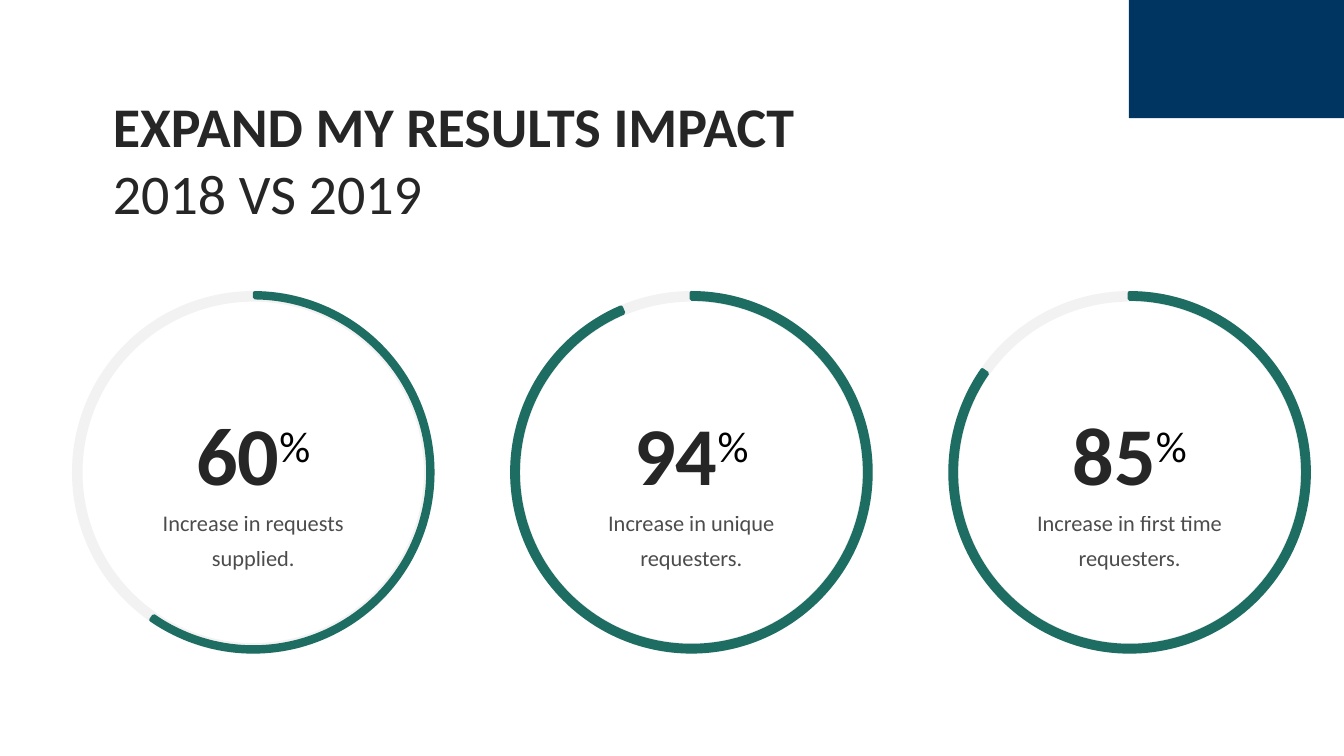
import dataclasses

import pptx
import pptx.dml.color
import pptx.enum.shapes
import pptx.enum.text
import pptx.oxml.ns
import pptx.util
from lxml import etree

SHAPE = pptx.enum.shapes.MSO_SHAPE
ALIGN = pptx.enum.text.PP_ALIGN
ANCHOR = pptx.enum.text.MSO_ANCHOR
qn = pptx.oxml.ns.qn
Inches, Pt = pptx.util.Inches, pptx.util.Pt

# Slide and grid, in inches
WIDTH, HEIGHT = 10, 10 * 9 / 16
RING_LEFT, RING_TOP, RING_SIZE = 0.55, 2.18, 2.67
COLUMN_STEP = 3.26


@dataclasses.dataclass(frozen=True)
class Theme:
    font: str = "Calibri"
    navy: str = "003562"
    green: str = "1E6D63"
    track: str = "F2F2F2"
    ink: str = "262626"
    black: str = "000000"
    title_size: int = 30
    figure_size: int = 44
    percent_size: int = 40
    caption_size: int = 12
    ring_line: int = 2


@dataclasses.dataclass(frozen=True)
class Gauge:
    figure: str
    caption: str
    start: float  # degrees; the mirrored arc runs from here to the top
    end: float = 270
    thickness: float = 0.017


THEME = Theme()
GAUGES = [
    Gauge("60", "Increase in requests supplied.", 55.28, 269.51, 0.013),
    Gauge("94", "Increase in unique requesters.", 293.09),
    Gauge("85", "Increase in first time requesters.", 325.21),
]


def rgb(color: str):
    return pptx.dml.color.RGBColor.from_string(color)


def add_shape(s, kind, box: tuple, color: str, line: float = 0):
    sp = s.shapes.add_shape(kind, *(Inches(v) for v in box))
    sp.shadow.inherit = False
    sp.fill.solid()
    sp.fill.fore_color.rgb = rgb(color)
    if line:
        sp.line.color.rgb = rgb(color)
        sp.line.width = Pt(line)
    else:
        sp.line.fill.background()
    return sp


def add_run(p, text: str, size: float, color: str, bold: bool = False):
    r = p.add_run()
    r.text = text
    r.font.name = THEME.font
    r.font.size = Pt(size)
    r.font.bold = bold
    r.font.color.rgb = rgb(color)
    return r


def set_insets(tf, x: float, y: float) -> None:
    tf.word_wrap = True
    tf.margin_left = tf.margin_right = Inches(x)
    tf.margin_top = tf.margin_bottom = Inches(y)


def add_title(s, lines: list[tuple[str, bool]]) -> None:
    tf = s.shapes.add_textbox(*(Inches(v) for v in (0.77, 0.64, 5.89, 0.98))).text_frame
    set_insets(tf, 0.07, 0.04)
    for i, (text, bold) in enumerate(lines):
        p = tf.add_paragraph() if i else tf.paragraphs[0]
        add_run(p, text, THEME.title_size, THEME.ink, bold)


def add_gauge(s, gauge: Gauge, column: int) -> None:
    box = (RING_LEFT + column * COLUMN_STEP, RING_TOP, RING_SIZE, RING_SIZE)

    # Full track, which holds the text
    ring = add_shape(s, SHAPE.DONUT, box, THEME.track, THEME.ring_line)
    ring.adjustments[0] = 0.019
    tf = ring.text_frame
    set_insets(tf, 0, 0)
    tf.vertical_anchor = ANCHOR.MIDDLE
    head, caption = tf.paragraphs[0], tf.add_paragraph()
    for p in (head, caption):
        p.alignment = ALIGN.CENTER
        p.line_spacing = 1.3
    add_run(head, gauge.figure, THEME.figure_size, THEME.ink, True)
    percent = add_run(head, "%", THEME.percent_size, THEME.black)
    percent.font._element.set("baseline", "30000")
    r = add_run(caption, gauge.caption, THEME.caption_size, THEME.black)
    color = r.font._element.find(f".//{qn('a:srgbClr')}")
    etree.SubElement(color, qn("a:alpha"), val="70000")

    # Progress arc; angles are stored in 60000ths of a degree, scaled by 100000
    arc = add_shape(s, SHAPE.BLOCK_ARC, box, THEME.green, THEME.ring_line)
    arc.adjustments[0] = gauge.start * 0.6
    arc.adjustments[1] = gauge.end * 0.6
    arc.adjustments[2] = gauge.thickness
    arc._element.spPr.find(qn("a:xfrm")).set("flipH", "1")


def main() -> None:
    prs = pptx.Presentation()
    prs.slide_width, prs.slide_height = Inches(WIDTH), Inches(HEIGHT)
    s = prs.slides.add_slide(prs.slide_layouts[6])

    # Corner block
    add_shape(s, SHAPE.RECTANGLE, (WIDTH * 0.84, 0, WIDTH * 0.16, 0.88), THEME.navy)

    # Heading
    add_title(s, [("EXPAND MY RESULTS IMPACT", True), ("2018 VS 2019", False)])

    # Gauges
    for column, gauge in enumerate(GAUGES):
        add_gauge(s, gauge, column)

    prs.save("out.pptx")


if __name__ == "__main__":
    main()
